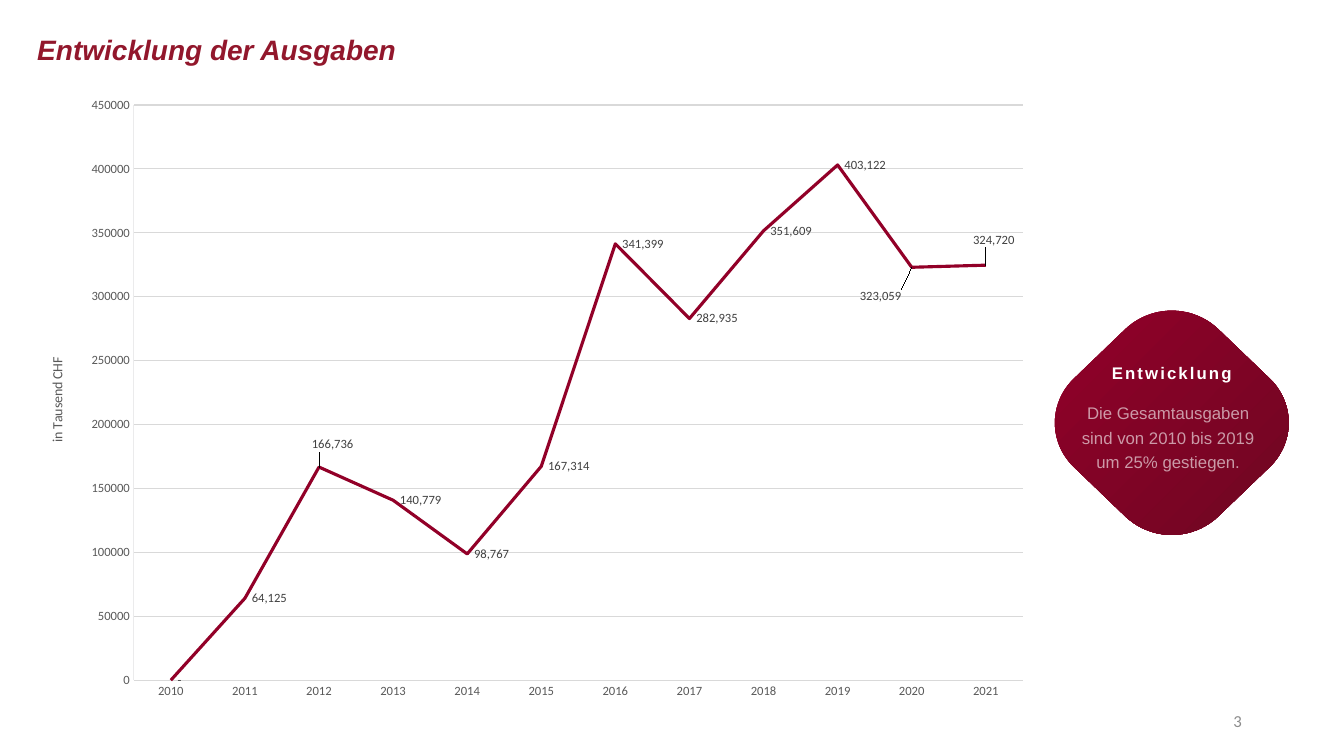
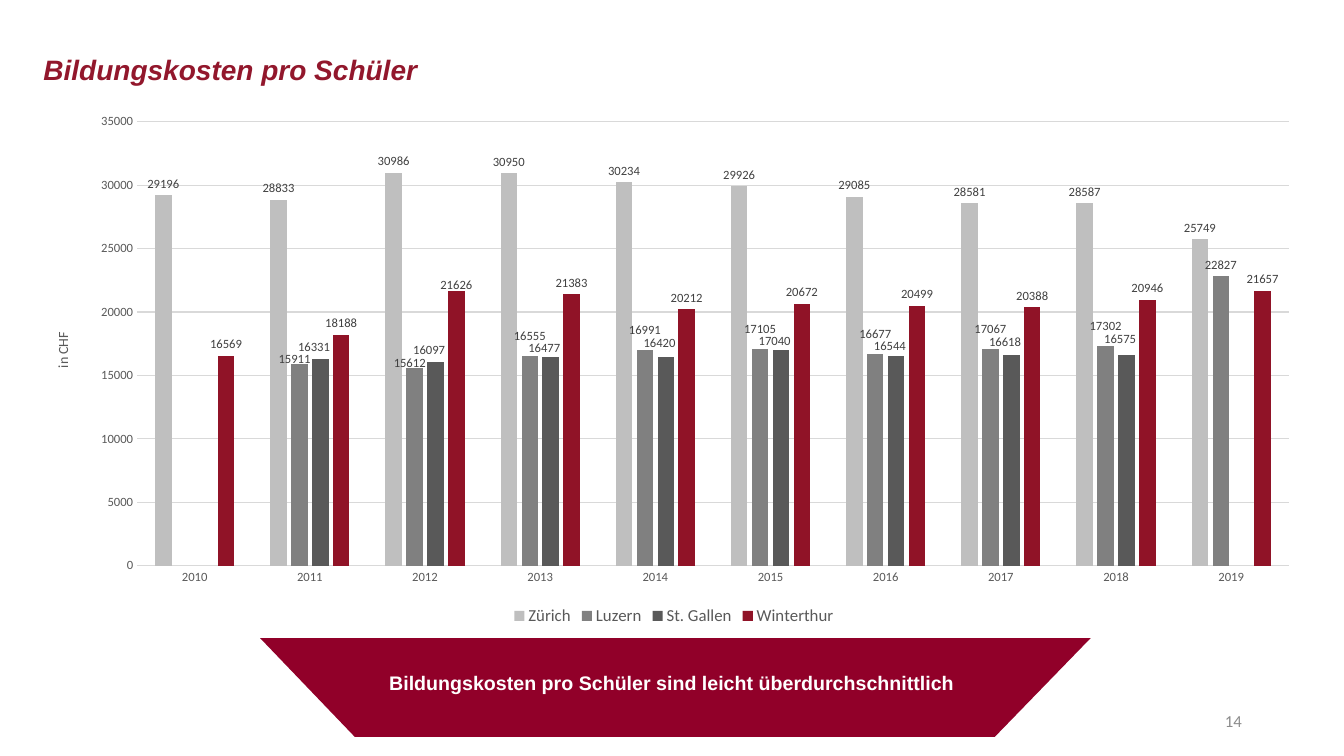
from lxml import etree
from pptx import Presentation
from pptx import util as u
from pptx.chart.data import CategoryChartData
from pptx.dml.color import RGBColor
from pptx.enum import chart as charts, text
from pptx.oxml import ns

COLORS = {
    "title": "92172C", "number": "8C8C8C", "white": "FFFFFF", "line": "920028",
    "band": "910029", "dark": "6F0722", "axis": "595959", "label": "404040",
    "grid": "D9D9D9", "value_axis": "EBEBEC", "light": "BFBFBF",
    "middle": "808080", "winterthur": "901327",
}
LEFT, CENTER, RIGHT = text.PP_ALIGN.LEFT, text.PP_ALIGN.CENTER, text.PP_ALIGN.RIGHT
TOP, MIDDLE, BOTTOM = text.MSO_ANCHOR.TOP, text.MSO_ANCHOR.MIDDLE, text.MSO_ANCHOR.BOTTOM
C15 = "http://schemas.microsoft.com/office/drawing/2012/chart"
LABEL_EXTENSION = "{CE6537A1-D6FC-4f65-9D91-7224C49458BB}"

EXPENSES = {
    "type": charts.XL_CHART_TYPE.LINE_STACKED,
    "box": (19.4, 61.2, 725.8, 447.1),
    "plot": (0.105, 0.031, 0.875, 0.919),
    "axis_title": ("in Tausend CHF", 0.018, 0.43),
    "scale": (450000, 50000),
    "format": '#,##0;-#,##0;"-"',
    "label_position": charts.XL_LABEL_POSITION.RIGHT,
    "value_line": "value_axis",
    "legend": False,
    "years": range(2010, 2022),
    "series": [
        ("Ausgaben", "line",
         [0, 64125, 166736, 140779, 98767, 167314, 341399, 282935, 351609, 403122, 323059, 324720],
         {**{index: (2, 0) for index in range(12)}, 2: (-8, -16), 10: (-40, 21), 11: (-12, -18)}),
    ],
}
COSTS = {
    "type": charts.XL_CHART_TYPE.COLUMN_CLUSTERED,
    "box": (23.8, 74.2, 915.1, 375.8),
    "plot": (0.081, 0.034, 0.899, 0.844),
    "axis_title": ("in CHF", 0.014, 0.43),
    "scale": (35000, 5000),
    "format": "General",
    "label_position": charts.XL_LABEL_POSITION.OUTSIDE_END,
    "value_line": None,
    "legend": True,
    "years": range(2010, 2020),
    "series": [
        ("Zürich", "light",
         [29196, 28833, 30986, 30950, 30234, 29926, 29085, 28581, 28587, 25749], {}),
        ("Luzern", "middle",
         [None, 15911, 15612, 16555, 16991, 17105, 16677, 17067, 17302, 22827],
         {1: (-3.5, 5), 2: (-3.5, 5), **{index: (0, -6) for index in range(3, 9)}}),
        ("St. Gallen", "axis",
         [None, 16331, 16097, 16477, 16420, 17040, 16544, 16618, 16575, None],
         {index: (-4.5, down)
          for index, down in enumerate((0, 0, 2, -2, 2, 1.5, -1, -3.5), start=1)}),
        ("Winterthur", "winterthur",
         [16569, 18188, 21626, 21383, 20212, 20672, 20499, 20388, 20946, 21657],
         {2: (0, 4)}),
    ],
}
BADGE_CENTER = (837, 302)
BADGE_CURVES = [
    [(69.5, -32), (88.2, -14.5), (88.2, 14.5), (69.5, 32)],
    [(33.5, 66.6), (14.8, 84.6), (-14.8, 84.6), (-33.5, 66.6)],
]
BAND = [(185.8, 455.8), (779, 455.8), (710.6, 526.3), (253.4, 526.3)]


def color(name):
    return RGBColor.from_string(COLORS[name])


def points(values):
    return [u.Pt(value) for value in values]


def write(shape, content, *, size, fill, font="Arial", bold=False, italic=False,
          align=LEFT, anchor=TOP, spacing=None, insets=(7.2, 3.6, 7.2, 3.6),
          tracking=None, alpha=None):
    frame = shape.text_frame
    frame.word_wrap = True
    frame.auto_size = text.MSO_AUTO_SIZE.NONE
    frame.vertical_anchor = anchor
    (frame.margin_left, frame.margin_top,
     frame.margin_right, frame.margin_bottom) = points(insets)
    paragraph = frame.paragraphs[0]
    paragraph.alignment = align
    if spacing:
        paragraph.line_spacing = spacing
    run = paragraph.add_run()
    run.text = content
    style_font(run.font, size, fill, font)
    run.font.bold, run.font.italic = bold, italic
    properties = run.font._element
    if tracking:
        properties.set("spc", str(int(tracking * 100)))
    if alpha:
        solid = properties.find(ns.qn("a:solidFill"))
        etree.SubElement(solid[0], ns.qn("a:alpha")).set("val", str(alpha * 1000))


def style_font(font, size, fill, name="Calibri"):
    font.size, font.name, font.bold = u.Pt(size), name, False
    font.color.rgb = color(fill)


def add_text(slide, content, box, **style):
    write(slide.shapes.add_textbox(*points(box)), content, **style)


def add_slide(presentation, title, title_box, number):
    slide = presentation.slides.add_slide(presentation.slide_layouts[5])
    heading = slide.shapes.title
    heading.left, heading.top, heading.width, heading.height = points(title_box)
    write(heading, title, size=20, fill="title", bold=True, italic=True,
          anchor=BOTTOM, spacing=0.9)
    add_text(slide, number, (678.2, 500.4, 216, 28.8), size=12, fill="number",
             font="Calibri", align=RIGHT, anchor=MIDDLE)
    return slide


def add_outline(slide, corners):
    corners = [tuple(points(corner)) for corner in corners]
    builder = slide.shapes.build_freeform(*corners[0], scale=1.0)
    builder.add_line_segments(corners[1:], close=True)
    shape = builder.convert_to_shape()
    shape.shadow.inherit = False
    shape.line.fill.background()
    return shape


def curve_points(curve, steps=20):
    for step in range(steps + 1):
        t = step / steps
        weights = ((1 - t) ** 3, 3 * t * (1 - t) ** 2, 3 * t * t * (1 - t), t ** 3)
        yield tuple(sum(w * p[axis] for w, p in zip(weights, curve)) for axis in (0, 1))


def set_layout(parent, index, **settings):
    for old in parent.findall(ns.qn("c:layout")):
        parent.remove(old)
    layout = etree.Element(ns.qn("c:layout"))
    manual = etree.SubElement(layout, ns.qn("c:manualLayout"))
    for name, value in settings.items():
        etree.SubElement(manual, ns.qn("c:" + name)).set("val", str(value))
    parent.insert(index, layout)


def hide_leader_lines(labels):
    extensions = etree.SubElement(labels._element, ns.qn("c:extLst"))
    extension = etree.SubElement(extensions, ns.qn("c:ext"), nsmap={"c15": C15})
    extension.set("uri", LABEL_EXTENSION)
    etree.SubElement(extension, "{%s}showLeaderLines" % C15).set("val", "0")


def style_line(line, fill, width=0.75):
    if fill is None:
        line.fill.background()
    else:
        line.color.rgb = color(fill)
        line.width = u.Pt(width)


def style_axes(chart, spec):
    for axis, line in ((chart.category_axis, "grid"), (chart.value_axis, spec["value_line"])):
        axis.major_tick_mark = axis.minor_tick_mark = charts.XL_TICK_MARK.NONE
        style_font(axis.tick_labels.font, 9, "axis")
        style_line(axis.format.line, line)
    chart.category_axis.has_major_gridlines = False
    values = chart.value_axis
    values.minimum_scale = 0
    values.maximum_scale, values.major_unit = spec["scale"]
    values.has_major_gridlines = True
    style_line(values.major_gridlines.format.line, "grid")
    values.tick_labels.number_format = "General"
    values.tick_labels.number_format_is_linked = False
    title, x, y = spec["axis_title"]
    paragraph = values.axis_title.text_frame.paragraphs[0]
    run = paragraph.add_run()
    run.text = title
    style_font(run.font, 10, "axis")
    set_layout(values.axis_title._element, 1, xMode="edge", yMode="edge", x=x, y=y)


def style_labels(series, shifts, spec):
    labels = series.data_labels
    labels.show_value = True
    labels.position = spec["label_position"]
    labels.number_format = spec["format"]
    labels.number_format_is_linked = False
    style_font(labels.font, 9, "label")
    width, height = spec["box"][2:]
    for index, (right, down) in shifts.items():
        label = series.points[index].data_label
        label.position = spec["label_position"]
        style_font(label.font, 9, "label")
        entry = next(item for item in labels._element.findall(ns.qn("c:dLbl"))
                     if item.find(ns.qn("c:idx")).get("val") == str(index))
        set_layout(entry, 1, x=round(right / width, 4), y=round(down / height, 4))
    hide_leader_lines(labels)


def add_chart(slide, spec):
    data = CategoryChartData(number_format=spec["format"])
    data.categories = [str(year) for year in spec["years"]]
    for name, _, values, _ in spec["series"]:
        data.add_series(name, values)
    chart = slide.shapes.add_chart(spec["type"], *points(spec["box"]), data).chart
    chart.has_title = False
    style_font(chart.font, 10, "axis")
    chart.has_legend = spec["legend"]
    if spec["legend"]:
        chart.legend.position = charts.XL_LEGEND_POSITION.BOTTOM
        chart.legend.include_in_layout = False
        style_font(chart.legend.font, 12, "axis")
    style_axes(chart, spec)
    plot = chart.plots[0]
    plot.vary_by_categories = False
    is_column = spec["type"] == charts.XL_CHART_TYPE.COLUMN_CLUSTERED
    if is_column:
        plot.gap_width, plot.overlap = 219, -27
    for series, (_, fill, _, shifts) in zip(plot.series, spec["series"]):
        if is_column:
            series.format.fill.solid()
            series.format.fill.fore_color.rgb = color(fill)
        else:
            series.smooth = False
            style_line(series.format.line, fill, 2.25)
        style_labels(series, shifts, spec)
    x, y, w, h = spec["plot"]
    area = chart._chartSpace.find(".//" + ns.qn("c:plotArea"))
    set_layout(area, 0, layoutTarget="inner", xMode="edge", yMode="edge", x=x, y=y, w=w, h=h)


def add_badge(slide):
    half = [point for curve in BADGE_CURVES for point in curve_points(curve)]
    outline = half + [(-x, -y) for x, y in half]
    center_x, center_y = BADGE_CENTER
    badge = add_outline(slide, [(center_x + x, center_y + y) for x, y in outline])
    badge.fill.gradient()
    badge.fill.gradient_angle = 315
    for stop, name, position in zip(badge.fill.gradient_stops, ("band", "dark"), (0, 1)):
        stop.color.rgb = color(name)
        stop.position = position
    add_text(slide, "Die Gesamtausgaben sind von 2010 bis 2019 um 25% gestiegen.",
             (763.9, 285.1, 146.2, 50.4), size=12, fill="white", alpha=60,
             align=CENTER, spacing=1.2, insets=(0, 0, 5, 0))
    add_text(slide, "Entwicklung", (790.6, 262.1, 92.9, 12.2), size=12, fill="white",
             bold=True, align=CENTER, spacing=0.8, insets=(0, 0, 0, 0), tracking=1.5)


def add_band(slide):
    band = add_outline(slide, BAND)
    band.fill.solid()
    band.fill.fore_color.rgb = color("band")
    add_text(slide, "Bildungskosten pro Schüler sind leicht überdurchschnittlich",
             (256.5, 475.9, 447, 24.5), size=14, fill="white", bold=True, align=CENTER)


def main():
    presentation = Presentation()
    presentation.slide_width, presentation.slide_height = points((960, 540))
    slide = add_slide(presentation, "Entwicklung der Ausgaben", (19.4, -10.1, 782.6, 61.2), "3")
    add_chart(slide, EXPENSES)
    add_badge(slide)
    slide = add_slide(presentation, "Bildungskosten pro Schüler", (23.8, 13.7, 782.6, 51.8), "14")
    add_band(slide)
    add_chart(slide, COSTS)
    presentation.save("out.pptx")


if __name__ == "__main__":
    main()
